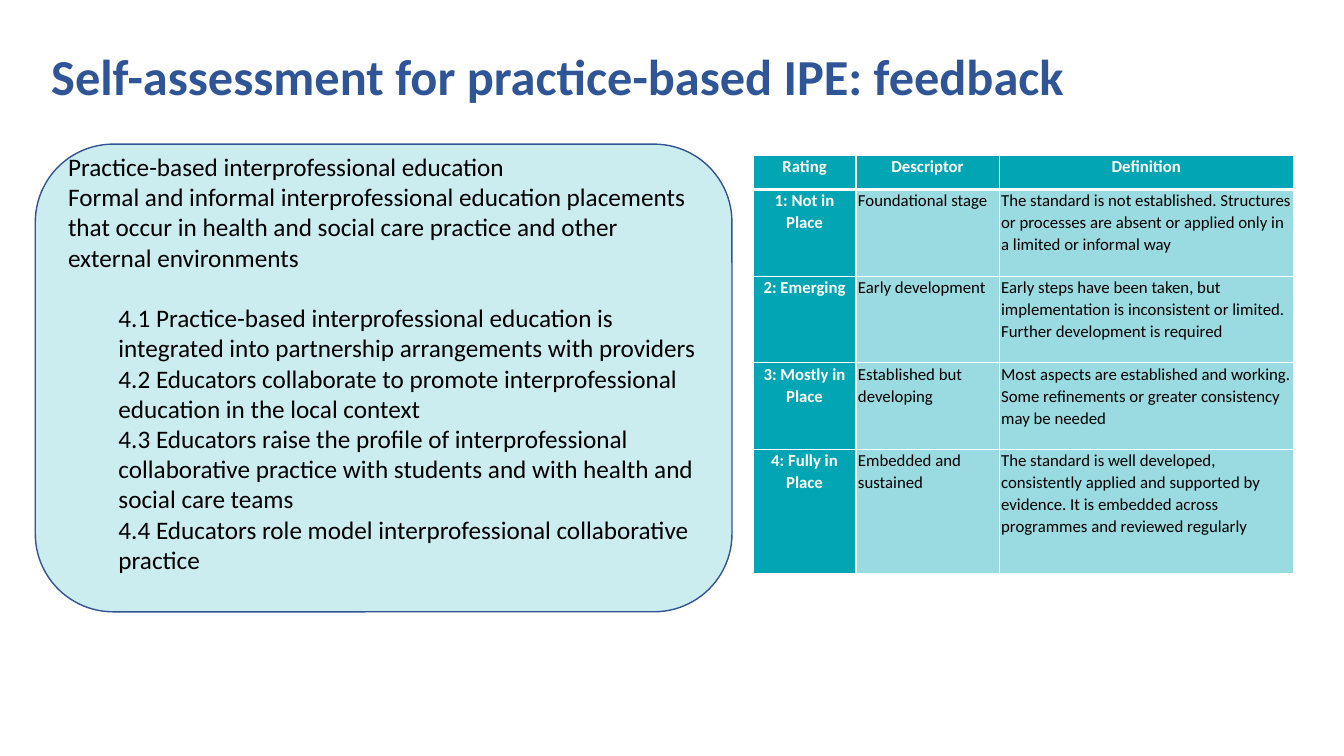
import pptx
import pptx.util
import pptx.dml.color
import pptx.enum.shapes
import pptx.enum.text
import pptx.oxml
import pptx.oxml.ns

Inches = pptx.util.Inches
Pt = pptx.util.Pt
ALIGN = pptx.enum.text.PP_ALIGN
MIDDLE = pptx.enum.text.MSO_ANCHOR.MIDDLE

COLORS = {"title": "2F5597", "edge": "325491", "teal": "02A5B4",
          "white": "FFFFFF", "black": "000000"}
FONT = "Calibri"
TITLE = "Self-assessment for practice-based IPE: feedback"
INTRO = [
    "Practice-based interprofessional education",
    "Formal and informal interprofessional education placements that occur in health "
    "and social care practice and other external environments",
]
POINTS = [
    "4.1 Practice-based interprofessional education is integrated into partnership "
    "arrangements with providers",
    "4.2 Educators collaborate to promote interprofessional education in the local context",
    "4.3 Educators raise the profile of interprofessional collaborative practice with "
    "students and with health and social care teams",
    "4.4 Educators role model interprofessional collaborative practice",
]
RATINGS = [
    ("Rating", "Descriptor", "Definition"),
    ("1: Not in Place", "Foundational stage",
     "The standard is not established. Structures or processes are absent or applied "
     "only in a limited or informal way"),
    ("2: Emerging", "Early development",
     "Early steps have been taken, but implementation is inconsistent or limited. "
     "Further development is required"),
    ("3: Mostly in Place", "Established but developing",
     "Most aspects are established and working. Some refinements or greater "
     "consistency may be needed"),
    ("4: Fully in Place", "Embedded and sustained",
     "The standard is well developed, consistently applied and supported by evidence. "
     "It is embedded across programmes and reviewed regularly"),
]
WIDTHS = [1.02, 1.42, 2.92]
HEIGHTS = [0.34, 0.86, 0.86, 0.86, 1.23]


def color(name):
    return pptx.dml.color.RGBColor.from_string(COLORS[name])


def paint(item, props, name, alpha=100):
    """Fill a shape or cell; props is its property element, alpha its opacity in percent."""
    item.fill.solid()
    item.fill.fore_color.rgb = color(name)
    if alpha < 100:
        tint = props.find(pptx.oxml.ns.qn("a:solidFill"))[0]
        tint.append(pptx.oxml.parse_xml(
            f'<a:alpha {pptx.oxml.ns.nsdecls("a")} val="{alpha * 1000}"/>'))


def write(para, text, size, tint, bold=False, align=ALIGN.LEFT):
    para.alignment = align
    run = para.add_run()
    run.text = text
    font = run.font
    font.name, font.size, font.bold = FONT, Pt(size), bold
    font.color.rgb = color(tint)


def add_title(slide):
    box = slide.shapes.add_textbox(Inches(0.41), Inches(0.18), Inches(10.75), Inches(1.22))
    paint(box, box._element.spPr, "white")
    frame = box.text_frame
    frame.word_wrap = True
    frame.vertical_anchor = MIDDLE
    para = frame.paragraphs[0]
    para.line_spacing = 0.9
    write(para, TITLE, 36, "title", bold=True)


def add_panel(slide):
    panel = slide.shapes.add_shape(
        pptx.enum.shapes.MSO_SHAPE.ROUNDED_RECTANGLE,
        Inches(0.35), Inches(1.43), Inches(6.91), Inches(4.64))
    panel.shadow.inherit = False
    paint(panel, panel._element.spPr, "teal", 20)
    panel.line.color.rgb = color("edge")
    panel.line.width = Pt(1)
    frame = panel.text_frame
    frame.word_wrap = True
    frame.vertical_anchor = MIDDLE
    frame.margin_bottom = Inches(0.35)
    for i, text in enumerate(INTRO + POINTS):
        para = frame.add_paragraph() if i else frame.paragraphs[0]
        if i >= len(INTRO):
            para.level = 1
            props = para._p.get_or_add_pPr()
            props.set("marL", str(Inches(0.5)))
            props.set("indent", "0")
        if i == len(INTRO):
            para.space_before = Pt(21.6)
        write(para, text, 18, "black")


def add_borders(cell, sides):
    """Put white lines on a cell; sides maps L, R, T, B to a width in points."""
    props = cell._tc.get_or_add_tcPr()
    for i, (side, width) in enumerate(sides.items()):
        props.insert(i, pptx.oxml.parse_xml(
            f'<a:ln{side} {pptx.oxml.ns.nsdecls("a")} w="{Pt(width)}"><a:solidFill>'
            f'<a:srgbClr val="{COLORS["white"]}"/></a:solidFill></a:ln{side}>'))


def add_ratings(slide):
    frame = slide.shapes.add_table(
        len(HEIGHTS), len(WIDTHS), Inches(7.47), Inches(1.54),
        Inches(sum(WIDTHS)), Inches(sum(HEIGHTS)))
    table = frame.table
    for col, width in zip(table.columns, WIDTHS):
        col.width = Inches(width)
    for r, (height, texts) in enumerate(zip(HEIGHTS, RATINGS)):
        table.rows[r].height = Inches(height)
        for c, text in enumerate(texts):
            cell = table.cell(r, c)
            head = r == 0 or c == 0
            cell.margin_left = cell.margin_right = Inches(0.02)
            cell.margin_top = cell.margin_bottom = 0
            paint(cell, cell._tc.get_or_add_tcPr(), "teal", 100 if head else 40)
            add_borders(cell, {"L": 1, "R": 1, "T": 3 if r == 1 else 1,
                               "B": 3 if r == 0 else 1})
            para = cell.text_frame.paragraphs[0]
            para.line_spacing = 1.07
            para.space_after = Pt(8)
            write(para, text, 12, "white" if head else "black", head,
                  ALIGN.CENTER if head else ALIGN.LEFT)


def main():
    deck = pptx.Presentation()
    deck.slide_width, deck.slide_height = Inches(13.33), Inches(7.5)
    slide = deck.slides.add_slide(deck.slide_layouts[6])
    add_title(slide)
    add_panel(slide)
    add_ratings(slide)
    deck.save("out.pptx")


if __name__ == "__main__":
    main()
